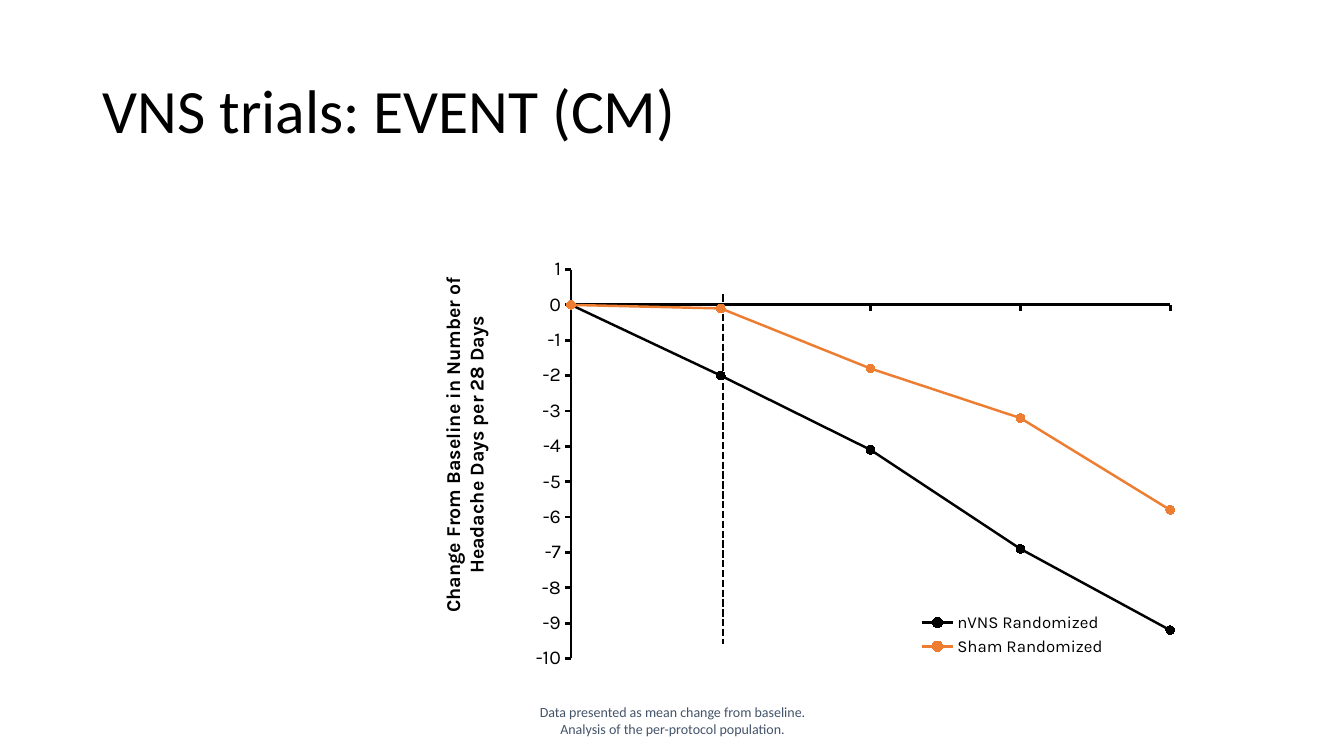
"""Build the EVENT trial slide with its headache-days line chart."""
from lxml import etree
from pptx import Presentation
from pptx.chart import data
from pptx.dml.color import RGBColor
from pptx.enum import chart as ch, dml, shapes, text
from pptx.oxml.ns import qn
from pptx.util import Inches, Pt

TITLE = "VNS trials: EVENT (CM)"
AXIS_TITLE = "Change From Baseline in Number of Headache Days per 28 Days"
FOOTNOTES = ["Data presented as mean change from baseline.",
             "Analysis of the per-protocol population."]
PERIODS = ["1", "2", "3", "4", "5"]
ARMS = [("nVNS Randomized", [0, -2, -4.1, -6.9, -9.2], "black"),
        ("Sham Randomized", [0, -0.1, -1.8, -3.2, -5.8], "orange")]
PLACES = {"title": (0.92, 0.4, 11.5, 1.45), "footnote": (4.42, 6.95, 4.5, 0.4),
          "axis title": (2.6, 4.13, 4.01, 0.57), "chart": (5.07, 2.5, 6.67, 4.6)}
PLOT = (0.089, 0.038, 0.891, 0.839)
LEGEND = (0.6, 0.77, 0.29, 0.11)
PHASE_END = (7.17, 2.92, 7.17, 6.39)
THEME = {"black": RGBColor(0, 0, 0), "orange": RGBColor(0xED, 0x7D, 0x31),
         "slate": RGBColor(0x44, 0x54, 0x6A), "body": "Calibri", "chart": "Karla",
         "title": 44, "axis": 14, "legend": 12, "note": 10,
         "axis line": 2, "series line": 1.75, "marker": 6}


def style(font, face, size, color, bold=False):
    font.name, font.size, font.bold = THEME[face], Pt(THEME[size]), bold
    font.color.rgb = THEME[color]


def add_text(slide, place, lines, face, size, color, align, bold=False):
    box = slide.shapes.add_textbox(*map(Inches, PLACES[place]))
    frame = box.text_frame
    frame.word_wrap = True
    frame.vertical_anchor = text.MSO_ANCHOR.MIDDLE
    frame.text = "\n".join(lines)
    for paragraph in frame.paragraphs:
        paragraph.alignment = align
        style(paragraph.font, face, size, color, bold)
    return box


def lay_out(parent, fractions, after=None, inner=False):
    for old in parent.findall(qn("c:layout")):
        parent.remove(old)
    layout = etree.Element(qn("c:layout"))
    manual = etree.SubElement(layout, qn("c:manualLayout"))
    settings = [("layoutTarget", "inner")] if inner else []
    settings += [("xMode", "edge"), ("yMode", "edge")]
    settings += zip("xywh", fractions)
    for tag, value in settings:
        etree.SubElement(manual, qn(f"c:{tag}")).set("val", str(value))
    if after is None:
        parent.insert(0, layout)
    else:
        after.addnext(layout)


def draw_line(line, color, width):
    line.color.rgb, line.width = THEME[color], Pt(THEME[width])


def add_trial_chart(slide):
    results = data.CategoryChartData()
    results.categories = PERIODS
    for name, changes, _ in ARMS:
        results.add_series(name, changes)
    chart = slide.shapes.add_chart(ch.XL_CHART_TYPE.LINE_MARKERS,
                                   *map(Inches, PLACES["chart"]), results).chart
    chart.has_title = False
    style(chart.font, "body", "note", "black")
    chart.plots[0].vary_by_categories = False
    for series, (_, _, color) in zip(chart.plots[0].series, ARMS):
        series.smooth = False
        draw_line(series.format.line, color, "series line")
        marker = series.marker
        marker.style, marker.size = ch.XL_MARKER_STYLE.CIRCLE, THEME["marker"]
        marker.format.fill.solid()
        marker.format.fill.fore_color.rgb = THEME[color]
        marker.format.line.color.rgb = THEME[color]

    periods, change = chart.category_axis, chart.value_axis
    for axis in (periods, change):
        axis.has_major_gridlines = False
        axis.major_tick_mark = ch.XL_TICK_MARK.OUTSIDE
        axis.minor_tick_mark = ch.XL_TICK_MARK.NONE
        draw_line(axis.format.line, "black", "axis line")
    periods.tick_label_position = ch.XL_TICK_LABEL_POSITION.NONE
    change.minimum_scale, change.maximum_scale, change.major_unit = -10, 1, 1
    style(change.tick_labels.font, "chart", "axis", "black")

    value_xml = chart._chartSpace.find(".//" + qn("c:valAx"))
    for old in value_xml.findall(qn("c:crossBetween")):
        value_xml.remove(old)
    crossing = etree.Element(qn("c:crossBetween"), val="midCat")
    value_xml.find(qn("c:crosses")).addnext(crossing)

    chart.has_legend = True
    chart.legend.position = ch.XL_LEGEND_POSITION.BOTTOM
    chart.legend.include_in_layout = False
    style(chart.legend.font, "chart", "legend", "black")
    lay_out(chart._chartSpace.find(".//" + qn("c:plotArea")), PLOT, inner=True)
    legend_xml = chart._chartSpace.find(".//" + qn("c:legend"))
    lay_out(legend_xml, LEGEND, after=legend_xml.find(qn("c:legendPos")))


def add_phase_line(slide):
    phase_end = slide.shapes.add_connector(shapes.MSO_CONNECTOR.STRAIGHT,
                                           *map(Inches, PHASE_END))
    draw_line(phase_end.line, "black", "series line")
    phase_end.line.dash_style = dml.MSO_LINE.SQUARE_DOT
    etree.SubElement(phase_end._element.spPr, qn("a:effectLst"))


def main():
    deck = Presentation()
    deck.slide_width, deck.slide_height = Inches(13.33), Inches(7.5)
    slide = deck.slides.add_slide(deck.slide_layouts[6])
    center = text.PP_ALIGN.CENTER
    title = add_text(slide, "title", [TITLE], "body", "title", "black", text.PP_ALIGN.LEFT)
    title.text_frame.paragraphs[0].line_spacing = 0.9
    add_text(slide, "footnote", FOOTNOTES, "body", "note", "slate", center)
    add_phase_line(slide)
    add_trial_chart(slide)
    axis_title = add_text(slide, "axis title", [AXIS_TITLE], "chart", "axis", "black",
                          center, bold=True)
    axis_title.rotation = 270
    axis_title.text_frame.vertical_anchor = text.MSO_ANCHOR.TOP
    deck.save("out.pptx")


if __name__ == "__main__":
    main()
